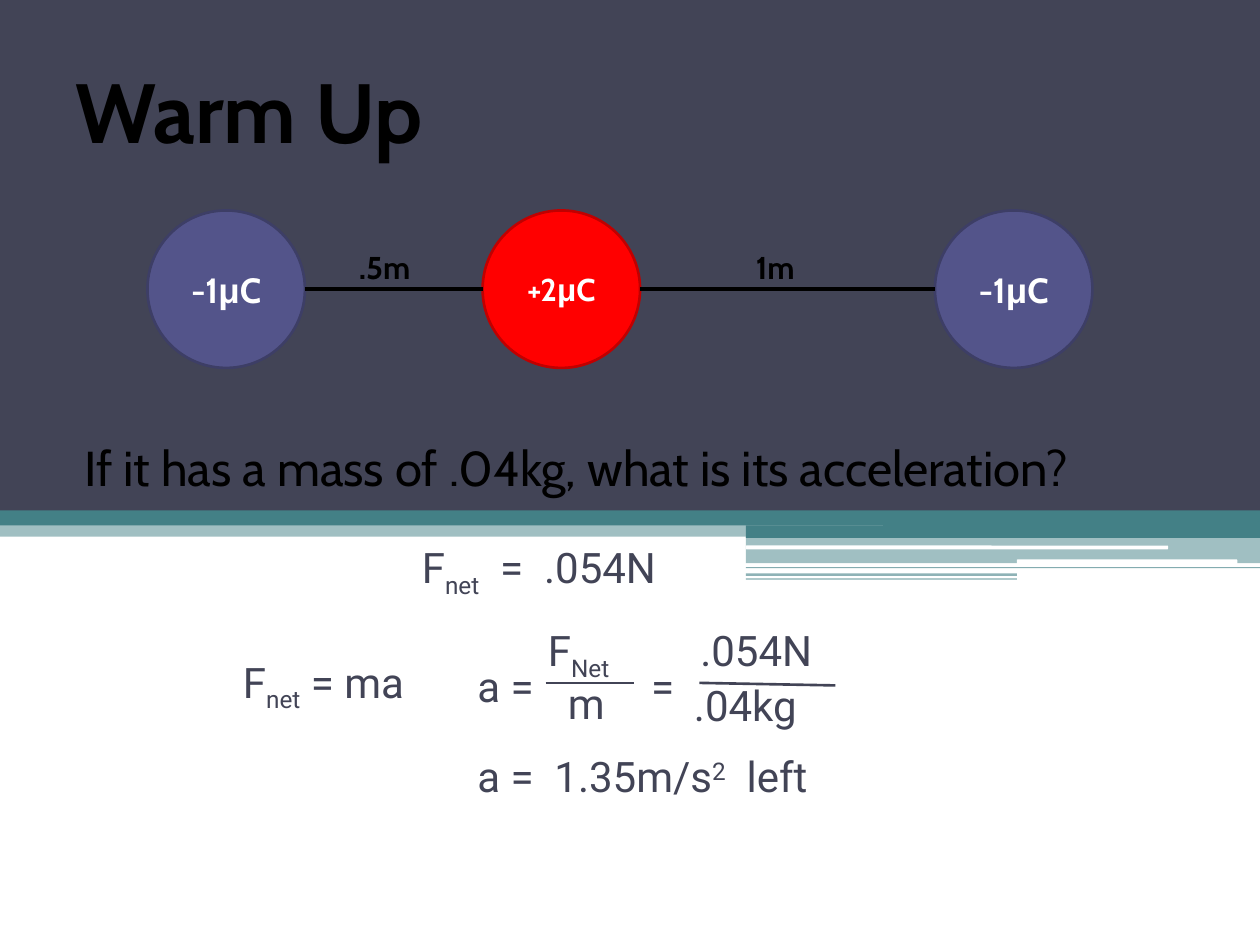
from pptx import Presentation
from pptx import util as u
from pptx.dml.color import RGBColor
from pptx.enum import shapes, text
from pptx.oxml.ns import qn
from lxml import etree

WIDTH, HEIGHT = 10, 7.5
TEAL, SLATE, WHITE, BLACK = "438086", "424456", "FFFFFF", "000000"
INDIGO, INDIGO_EDGE, RED, RED_EDGE = "53548A", "3D3E66", "FF0000", "C00000"
SPLIT, STEP = 5.92, 8.07  # where the right-hand stripes begin and change

# Header decoration: left, top, width, height, colour, opacity %
BANDS = [
    (SPLIT, 4.17, WIDTH - SPLIT, 0.1, TEAL, 100),
    (SPLIT, 4.26, WIDTH - SPLIT, 0.21, TEAL, 50),
    (SPLIT, 4.5, WIDTH - SPLIT, 0.01, TEAL, 65),
    (SPLIT, 4.55, STEP - SPLIT, 0.02, TEAL, 60),
    (SPLIT, 4.59, STEP - SPLIT, 0.01, TEAL, 65),
    (SPLIT, 4.33, 3.35, 0.03, WHITE, 100),
    (STEP, 4.44, 1.75, 0.04, WHITE, 100),
    (0, 3.99, WIDTH, 0.27, TEAL, 50),
    (0, 4.02, WIDTH, 0.15, TEAL, 100),
    (7.01, 3.98, 2.99, 0.27, TEAL, 100),
    (0, 0, WIDTH, 4.05, SLATE, 100),
]

# Charges on one axis: left, value, text size, fill, edge
DIAMETER, CHARGE_TOP = 1.25, 1.67
CHARGES = [
    (1.17, "-1", 20, INDIGO, INDIGO_EDGE),
    (3.83, "+2", 18, RED, RED_EDGE),
    (7.42, "-1", 20, INDIGO, INDIGO_EDGE),
]

# Labels: left, top, width, height, wording, size, bold
LABELS = [
    (2.75, 1.92, 0.68, 0.4, ".5m", 18, True),
    (5.9, 1.92, 0.6, 0.4, "1m", 18, True),
    (0.5, 0.42, 3.35, 0.91, "Warm Up", 48, True),
    (0.57, 3.42, 8.8, 0.57, "If it has a mass of .04kg, what is its acceleration?", 28, False),
]

# Equations: left, top, width, then (wording, baseline shift %) pieces
SUB, SUPER = -25, 30
EQUATIONS = [
    (3.25, 4.25, 2.26, [("F", 0), ("net", SUB), ("  =  .054N", 0)]),
    (1.83, 5.16, 1.61, [("F", 0), ("net", SUB), (" = ma", 0)]),
    (3.69, 5.91, 2.97, [("a =  1.35m/s", 0), ("2", SUPER), ("  left", 0)]),
]
# Fractions: their pieces, then the bar's two ends
FRACTIONS = [
    ([(3.69, 5.19, 0.78, [("a =", 0)]),
      (4.25, 4.91, 0.78, [("F", 0), ("Net", SUB)]),
      (4.41, 5.33, 0.5, [("m", 0)])],
     (4.33, 5.42, 5.03, 5.42)),
    ([(5.07, 5.19, 0.5, [("=", 0)]),
      (5.46, 4.91, 1.17, [(".054N", 0)]),
      (5.41, 5.34, 1.1, [(".04kg", 0)])],
     (5.55, 5.42, 6.63, 5.44)),
]


def rgb(hex_colour):
    return RGBColor.from_string(hex_colour)


def inches(*lengths):
    return [u.Inches(length) for length in lengths]


def style_font(font, name, size, colour, bold=False):
    font.name, font.size, font.bold = name, u.Pt(size), bold
    font.color.rgb = rgb(colour)


def add_filled(parent, preset, box, fill):
    shape = parent.add_shape(preset, *inches(*box))
    shape.shadow.inherit = False
    shape.fill.solid()
    shape.fill.fore_color.rgb = rgb(fill)
    return shape


def add_band(parent, box, colour, opacity):
    rounded = colour == WHITE
    preset = shapes.MSO_SHAPE.ROUNDED_RECTANGLE if rounded else shapes.MSO_SHAPE.RECTANGLE
    band = add_filled(parent, preset, box, colour)
    band.line.fill.background()
    if opacity < 100:
        srgb = band.fill._xPr.find(".//" + qn("a:srgbClr"))
        etree.SubElement(srgb, qn("a:alpha"), val=str(opacity * 1000))


def add_charge(parent, left, value, size, fill, edge):
    box = (left, CHARGE_TOP, DIAMETER, DIAMETER)
    charge = add_filled(parent, shapes.MSO_SHAPE.OVAL, box, fill)
    charge.line.color.rgb = rgb(edge)
    charge.line.width = u.Pt(1.5)
    charge.text_frame.vertical_anchor = text.MSO_ANCHOR.MIDDLE
    paragraph = charge.text_frame.paragraphs[0]
    paragraph.alignment = text.PP_ALIGN.CENTER
    for wording, font in ((value, "Cabin"), ("μ", "Arial"), ("C", "Cabin")):
        run = paragraph.add_run()
        run.text = wording
        style_font(run.font, font, size, WHITE, True)


def add_line(parent, ends, colour, weight):
    line = parent.add_connector(shapes.MSO_CONNECTOR.STRAIGHT, *inches(*ends))
    line.line.color.rgb = rgb(colour)
    line.line.width = u.Pt(weight)
    etree.SubElement(line._element.spPr, qn("a:effectLst"))


def add_text(parent, box, pieces, font, size, colour, bold=False):
    frame = parent.add_textbox(*inches(*box)).text_frame
    frame.word_wrap = False
    frame.auto_size = text.MSO_AUTO_SIZE.SHAPE_TO_FIT_TEXT
    paragraph = frame.paragraphs[0]
    style_font(paragraph.font, font, size, colour, bold)
    for wording, shift in pieces:
        run = paragraph.add_run()
        run.text = wording
        if shift:
            run.font._element.set("baseline", str(shift * 1000))


def add_equation(parent, left, top, width, pieces):
    add_text(parent, (left, top, width, 0.5), pieces, "Roboto", 24, SLATE)


def main():
    deck = Presentation()
    deck.slide_width, deck.slide_height = inches(WIDTH, HEIGHT)
    slide = deck.slides.add_slide(deck.slide_layouts[6])
    canvas = slide.shapes

    # Header
    for *box, colour, opacity in BANDS:
        add_band(canvas, box, colour, opacity)

    # Charges and the distances between neighbours
    for charge in CHARGES:
        add_charge(canvas, *charge)
    axis = CHARGE_TOP + DIAMETER / 2
    for (left, *_), (right, *_) in zip(CHARGES, CHARGES[1:]):
        add_line(canvas, (left + DIAMETER, axis, right, axis), BLACK, 2.25)

    # Title, distances and question
    for *box, wording, size, bold in LABELS:
        add_text(canvas, box, [(wording, 0)], "Cabin", size, BLACK, bold)

    # Worked solution
    for equation in EQUATIONS:
        add_equation(canvas, *equation)
    for pieces, bar in FRACTIONS:
        group = canvas.add_group_shape().shapes
        for piece in pieces:
            add_equation(group, *piece)
        add_line(group, bar, SLATE, 1.5)

    deck.save("out.pptx")


if __name__ == "__main__":
    main()
